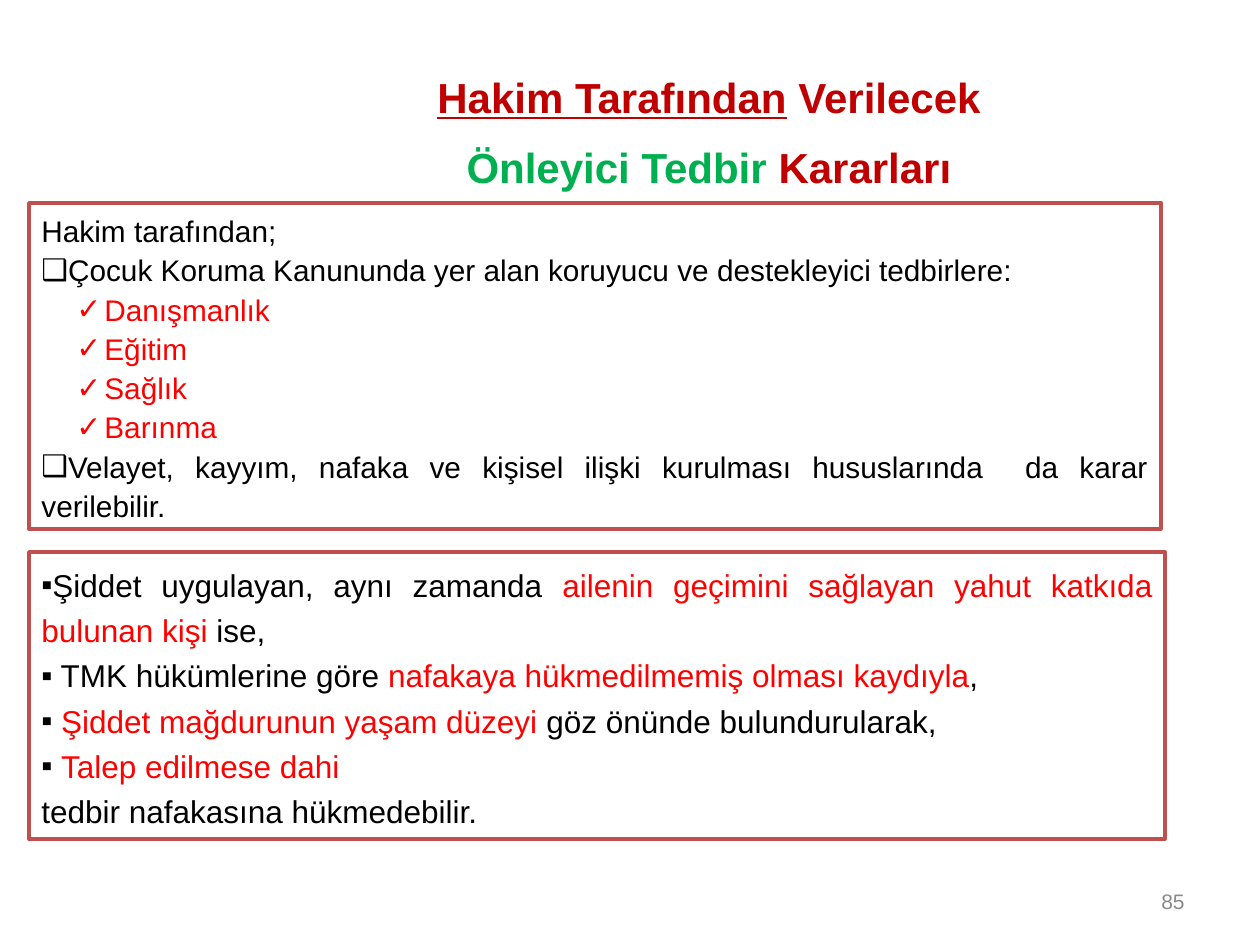
from lxml import etree
from pptx import Presentation
from pptx.dml.color import RGBColor
from pptx.enum.shapes import MSO_SHAPE
from pptx.enum.text import MSO_ANCHOR, PP_ALIGN
from pptx.oxml.ns import qn
from pptx.util import Emu, Pt

RECT = MSO_SHAPE.RECTANGLE
TOP, MIDDLE = MSO_ANCHOR.TOP, MSO_ANCHOR.MIDDLE
CENTER, RIGHT, JUSTIFY = PP_ALIGN.CENTER, PP_ALIGN.RIGHT, PP_ALIGN.JUSTIFY
PX = 914400 / 126
BLACK, RED, DARK_RED, GREEN = "000000", "FF0000", "C00000", "00B050"


def color(value):
    return RGBColor.from_string(value)


def add_text(tf, runs, size, align=JUSTIFY, spacing=1.0, bullet=None,
             indent=0, hanging=0, bold=None):
    """Add a paragraph of (text, colour[, underline]) runs."""
    p = tf.paragraphs[0]
    if p.runs:
        p = tf.add_paragraph()
    p.alignment = align
    p.line_spacing = spacing
    for text, fill, *underline in runs:
        r = p.add_run()
        r.text = text
        r.font.name = "Arial"
        r.font.size = Pt(size)
        r.font.bold = bold
        r.font.underline = bool(underline)
        r.font.color.rgb = color(fill)
    if bullet:
        pPr = p._p.get_or_add_pPr()
        pPr.set("marL", str(round(indent * PX)))
        pPr.set("indent", str(round(-hanging * PX)))
        etree.SubElement(pPr, qn("a:buFont")).set("typeface", "Arial")
        etree.SubElement(pPr, qn("a:buChar")).set("char", bullet)


prs = Presentation()
prs.slide_width, prs.slide_height = Emu(round(1260 * PX)), Emu(round(945 * PX))
s = prs.slides.add_slide(prs.slide_layouts[6])

# Framed boxes
frames = []
for x, y, w, h, fill in [(29, 203, 1132, 326, "FFFFFF"),
                         (29, 552, 1136, 287, None)]:
    sp = s.shapes.add_shape(RECT, *(Emu(round(v * PX)) for v in (x, y, w, h)))
    sp.shadow.inherit = False
    if fill:
        sp.fill.solid()
        sp.fill.fore_color.rgb = color(fill)
    else:
        sp.fill.background()
    sp.line.color.rgb = color("C0504D")
    sp.line.width = Pt(2)
    frames.append(sp.text_frame)

# Title and slide number
for x, y, w, h in [(362, 45, 694, 147), (903, 876, 294, 50)]:
    sp = s.shapes.add_textbox(*(Emu(round(v * PX)) for v in (x, y, w, h)))
    frames.append(sp.text_frame)

for tf in frames:
    tf.word_wrap = True
    tf.vertical_anchor = TOP
measures, alimony, title, number = frames

add_text(title, [("Hakim Tarafından", DARK_RED, True),
                 (" Verilecek ", DARK_RED),
                 ("Önleyici Tedbir", GREEN),
                 (" Kararları", DARK_RED)],
         24, align=CENTER, spacing=1.4, bold=True)
number.vertical_anchor = MIDDLE
add_text(number, [("85", "898989")], 12, align=RIGHT)

# Measures the judge can order
add_text(measures, [("Hakim tarafından;", BLACK)], 17, spacing=1.1)
add_text(measures, [("Çocuk Koruma Kanununda yer alan koruyucu ve "
                     "destekleyici tedbirlere:", BLACK)],
         17, spacing=1.1, bullet="❑")
for item in ["Danışmanlık", "Eğitim", "Sağlık", "Barınma"]:
    add_text(measures, [(item, RED)], 17, spacing=1.1, bullet="✓",
             indent=63, hanging=28)
add_text(measures, [("Velayet, kayyım, nafaka ve kişisel ilişki kurulması "
                     "hususlarında  da karar verilebilir.", BLACK)],
         17, spacing=1.1, bullet="❑")

# Conditions for interim alimony
conditions = [
    [("Şiddet uygulayan, aynı zamanda ", BLACK),
     ("ailenin geçimini sağlayan yahut katkıda bulunan kişi", RED),
     (" ise,", BLACK)],
    [(" TMK hükümlerine göre ", BLACK),
     ("nafakaya hükmedilmemiş olması kaydıyla", RED), (",", BLACK)],
    [(" ", BLACK), ("Şiddet mağdurunun yaşam düzeyi ", RED),
     ("göz önünde bulundurularak,", BLACK)],
    [(" ", BLACK), ("Talep edilmese dahi", RED)],
]
for runs in conditions:
    add_text(alimony, runs, 18, spacing=1.2, bullet="▪")
add_text(alimony, [("tedbir nafakasına hükmedebilir.", BLACK)], 18, spacing=1.2)

prs.save("out.pptx")
